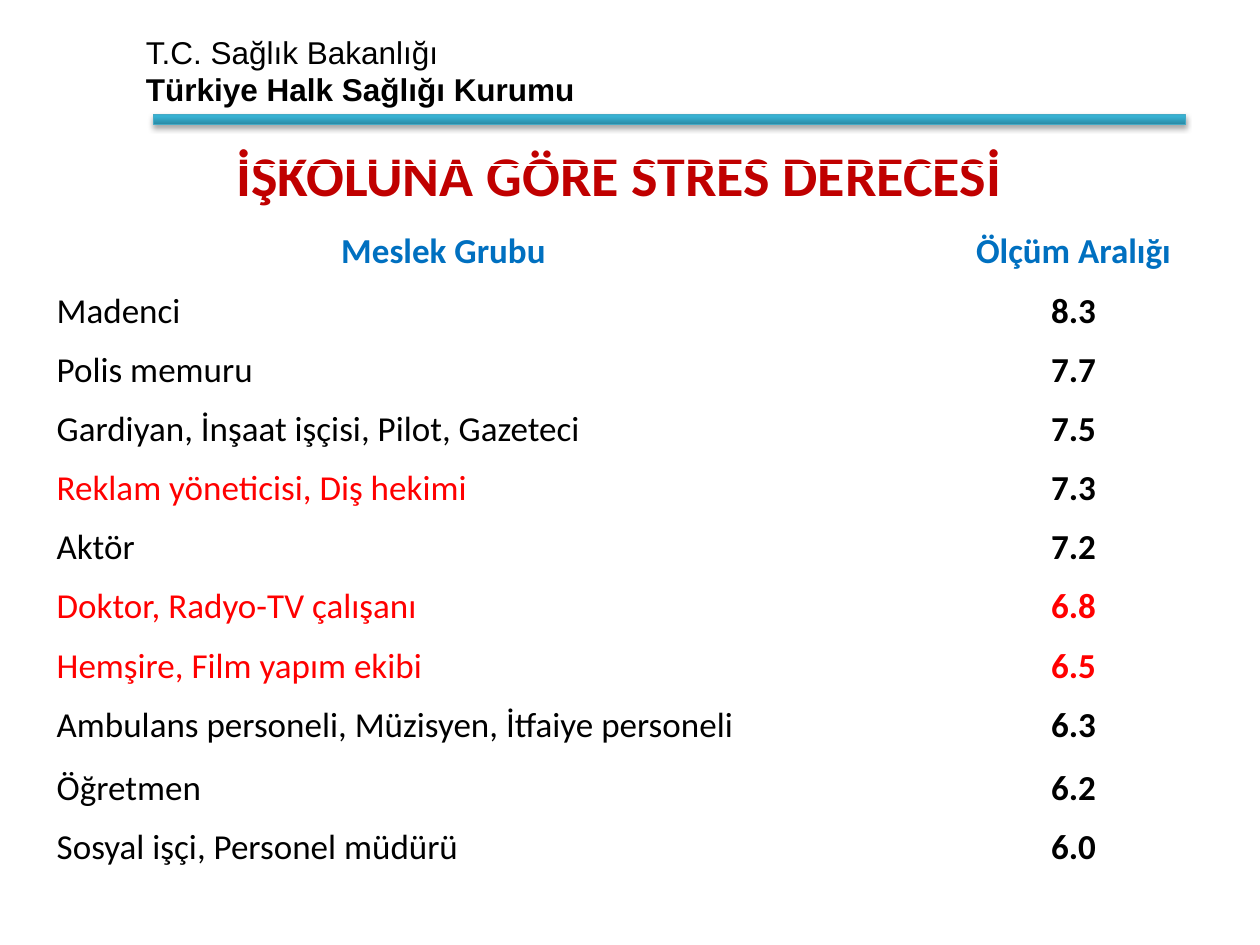
from dataclasses import dataclass
from lxml.etree import SubElement
from pptx import Presentation
from pptx.dml.color import RGBColor
from pptx.enum.shapes import MSO_SHAPE
from pptx.enum.text import MSO_ANCHOR, PP_ALIGN
from pptx.oxml.ns import qn
from pptx.util import Inches, Pt


@dataclass(frozen=True)
class Theme:
    black: str = "000000"
    red: str = "FF0000"
    title: str = "C00000"
    head: str = "0070C0"
    edge: str = "46AAC5"
    dark: str = "2A88A2"
    light: str = "37B1D2"
    brand: str = "Arial"
    body: str = "Calibri"
    large: int = 32
    mid: int = 20
    small: int = 18


T = Theme()
UNIT = Inches(0.1)  # the slide is a grid of 100 columns by 75 rows

HEAD = ("Meslek Grubu", "Ölçüm Aralığı")
JOBS = [  # job group, score, job colour, score colour
    ("Madenci", "8.3", T.black, T.black),
    ("Polis memuru", "7.7", T.black, T.black),
    ("Gardiyan, İnşaat işçisi, Pilot, Gazeteci", "7.5", T.black, T.black),
    ("Reklam yöneticisi, Diş hekimi", "7.3", T.red, T.black),
    ("Aktör", "7.2", T.black, T.black),
    ("Doktor, Radyo-TV çalışanı", "6.8", T.red, T.red),
    ("Hemşire, Film yapım ekibi", "6.5", T.red, T.red),
    ("Ambulans personeli, Müzisyen, İtfaiye personeli", "6.3", T.black, T.black),
    ("Öğretmen", "6.2", T.black, T.black),
    ("Sosyal işçi, Personel müdürü", "6.0", T.black, T.black),
]


def grid(*cells):
    """Turn grid counts into lengths."""
    return [round(n * UNIT) for n in cells]


def write(para, text, size=T.mid, font=T.body, color=T.black, bold=False,
          align=PP_ALIGN.LEFT, before=0):
    para.alignment = align
    para.space_before = Pt(before)
    run = para.add_run()
    run.text = text
    run.font.size, run.font.name, run.font.bold = Pt(size), font, bold
    run.font.color.rgb = RGBColor.from_string(color)


def shade(shape):
    """Give the shape a soft shadow that falls straight down."""
    shape.shadow.inherit = False
    effects = shape._element.spPr.find(qn("a:effectLst"))
    outer = SubElement(effects, qn("a:outerShdw"), blurRad=str(Pt(3.1)),
                       dist=str(Pt(1.8)), dir="5400000", rotWithShape="0")
    tint = SubElement(outer, qn("a:srgbClr"), val=T.black)
    SubElement(tint, qn("a:alpha"), val="35000")


def banner(slide, left, top, width, height):
    """Place the issuing body's name above a gradient rule."""
    name = slide.shapes.add_textbox(*grid(left, top, width * 0.82, height * 0.91))
    frame = name.text_frame
    frame.word_wrap = True
    write(frame.paragraphs[0], "T.C. Sağlık Bakanlığı", size=T.small, font=T.brand)
    write(frame.add_paragraph(), "Türkiye Halk Sağlığı Kurumu", size=T.small,
          font=T.brand, bold=True)

    thick = 0.8
    rule = slide.shapes.add_shape(MSO_SHAPE.RECTANGLE, *grid(
        left + 1.6, top + height - thick, width - 1.6, thick))
    rule.fill.gradient()
    rule.fill.gradient_angle = 90
    for stop, color, place in zip(rule.fill.gradient_stops, (T.dark, T.light), (0, 0.8)):
        stop.color.rgb = RGBColor.from_string(color)
        stop.position = place
    rule.line.color.rgb = RGBColor.from_string(T.edge)
    rule.line.width = Pt(0.75)
    shade(rule)


def heading(slide, *box):
    title = slide.shapes.title
    title.left, title.top, title.width, title.height = grid(*box)
    title.text_frame.vertical_anchor = MSO_ANCHOR.MIDDLE
    write(title.text_frame.paragraphs[0], "İŞKOLUNA GÖRE STRES DERECESİ",
          size=T.large, color=T.title, bold=True, align=PP_ALIGN.CENTER)


def scores(slide, left, top, width, height):
    """Place the table: an empty merged row, the heads, then the jobs."""
    count = len(JOBS) + 2
    table = slide.shapes.add_table(count, 2, *grid(left, top, width, height)).table
    table.first_row = table.horz_banding = False
    for col, share in zip(table.columns, (0.634, 0.366)):
        col.width = round(width * share * UNIT)
    for row in table.rows:
        row.height = Inches(0.47)
    table.rows[9].height = Inches(0.5)
    for cell in table.iter_cells():
        cell.fill.background()
    table.cell(0, 0).merge(table.cell(0, 1))

    def put(row, col, text, **look):
        write(table.cell(row, col).text_frame.paragraphs[0], text, before=4, **look)

    for col, text in enumerate(HEAD):
        put(1, col, text, color=T.head, bold=True, align=PP_ALIGN.CENTER)
    for row, (job, score, ink, mark) in enumerate(JOBS, 2):
        put(row, 0, job, color=ink)
        put(row, 1, score, color=mark, bold=True, align=PP_ALIGN.CENTER)


def main():
    deck = Presentation()
    deck.slide_width, deck.slide_height = grid(100, 75)
    slide = deck.slides.add_slide(deck.slide_layouts[5])
    banner(slide, 10.6, 2.1, 83.5, 7.8)
    heading(slide, 9.8, 9.9, 78.7, 7.9)
    scores(slide, 3.5, 13.1, 100, 56.6)
    deck.save("out.pptx")


if __name__ == "__main__":
    main()
